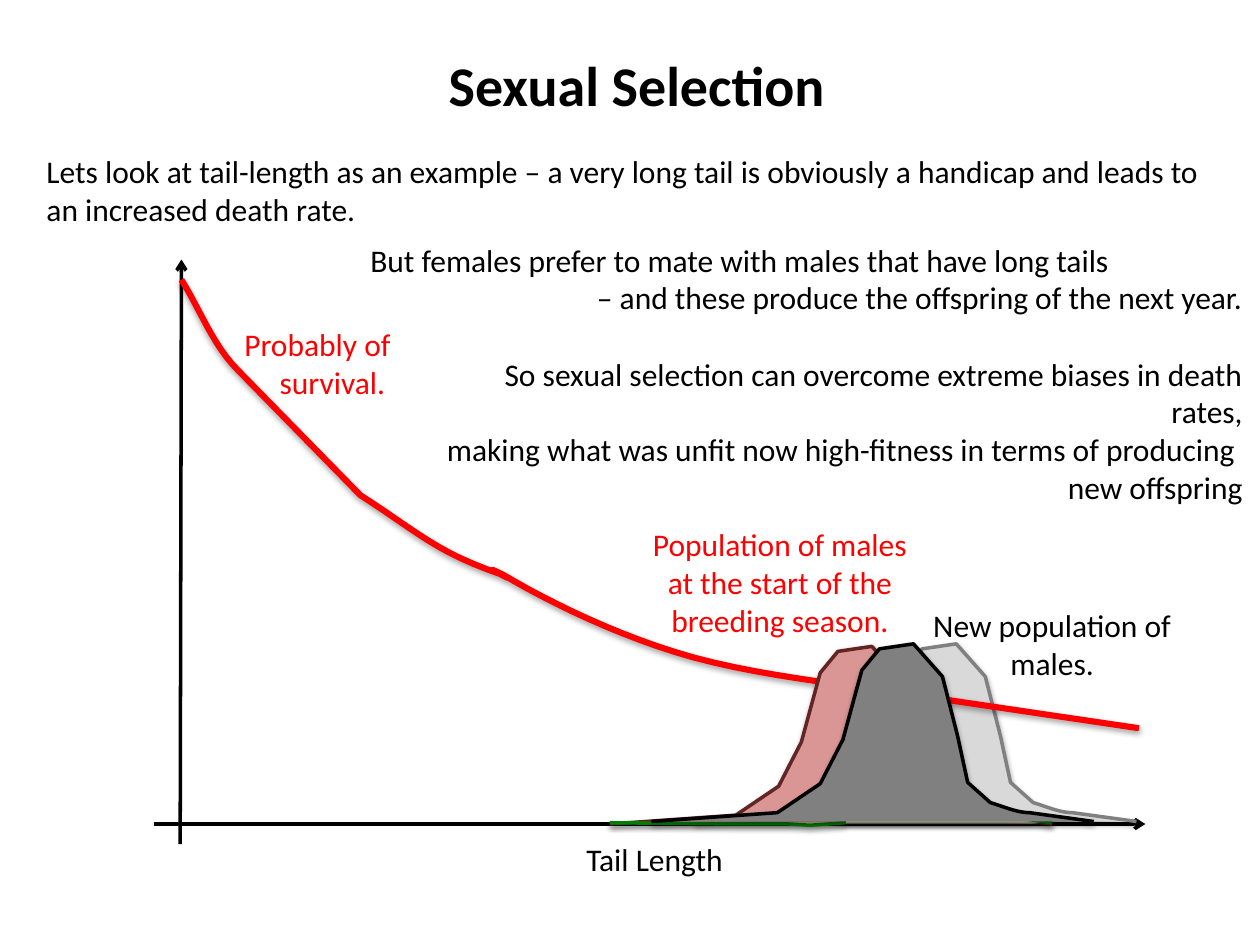
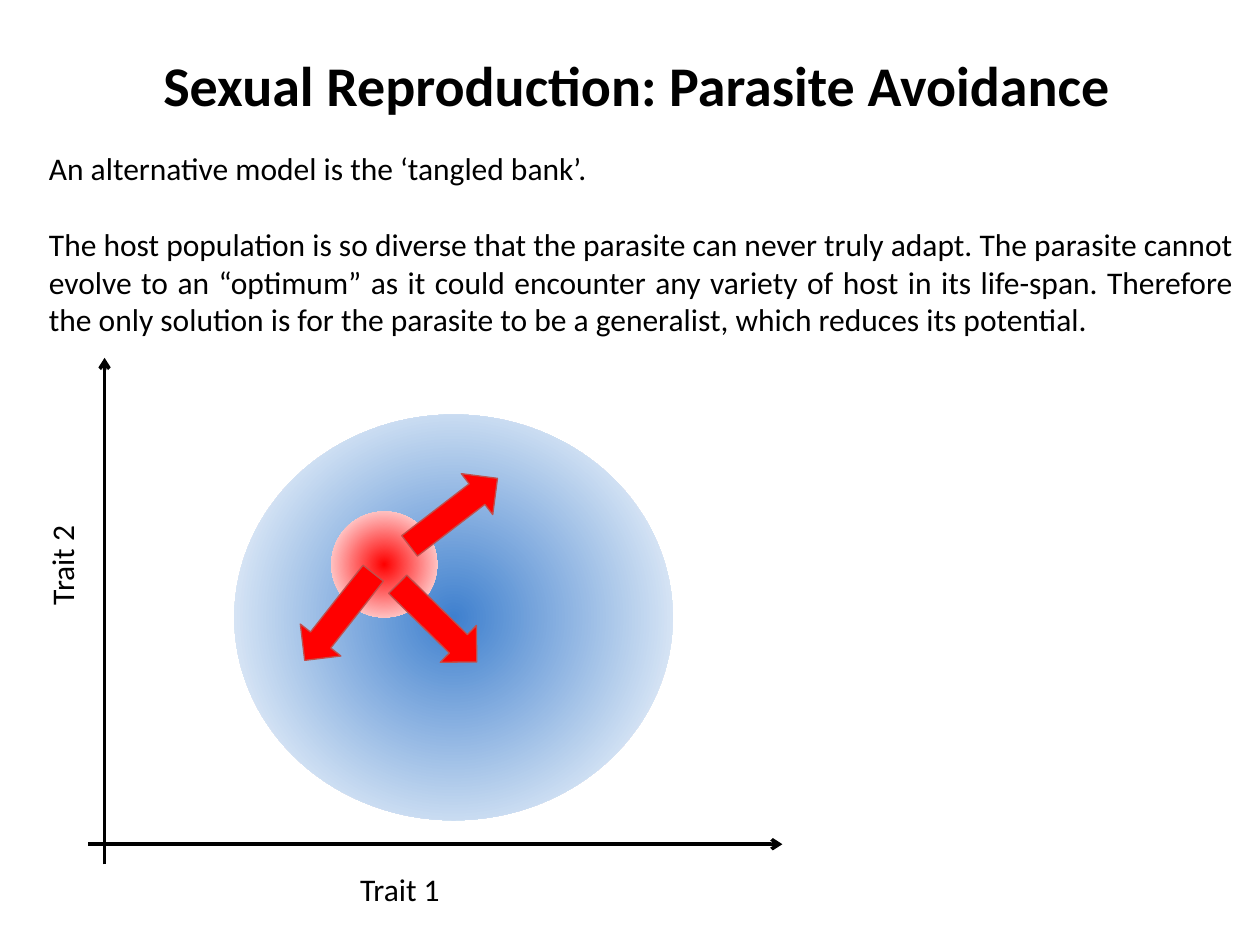
from pptx import Presentation
from pptx.dml.color import RGBColor
from pptx.enum.shapes import MSO_CONNECTOR, MSO_SHAPE
from pptx.enum.text import MSO_AUTO_SIZE as AutoSize, PP_ALIGN as Align
from pptx.oxml import parse_xml
from pptx.oxml.ns import nsdecls, qn
from pptx.util import Inches, Pt

# Shared look
FONT = "Calibri"
BLACK, RED, GREY = "000000", "FF0000", "808080"
BLANK_LINE = 22  # points, one empty line of body text

# Outlines: (x, y) is a straight step, six numbers are a Bezier curve
SURVIVAL = [(1.44, 2.22), (1.59, 2.46, 1.69, 2.74, 1.89, 2.94), (2.86, 3.93),
            (3.34, 4.24, 3.46, 4.38, 3.98, 4.56), (4.17, 4.66, 3.74, 4.44, 3.99, 4.56),
            (4.36, 4.78, 4.93, 5.06, 5.51, 5.22), (6.15, 5.39, 6.82, 5.44, 7.48, 5.55),
            (9.04, 5.78)]
RIGHT_SIDE = [(7.15, 5.39), (7.27, 5.86), (7.35, 6.23), (7.53, 6.39),
              (7.63, 6.42, 7.74, 6.47, 7.84, 6.47), (8.35, 6.54)]
POPULATION = [(4.84, 6.54), (5.84, 6.47), (6.18, 6.24), (6.36, 5.89), (6.51, 5.34),
              (6.65, 5.17), (6.92, 5.13)] + RIGHT_SIDE
BREEDERS = [(4.84, 6.54), (5.84, 6.55), (6.26, 6.55), (6.43, 6.56), (6.58, 6.55),
            (6.7, 6.54), (6.74, 5.92), (6.8, 5.48), (6.92, 5.29)] + RIGHT_SIDE


def rgb(color):
    return RGBColor.from_string(color)


def add_text(page, place, lines, size=18, color=BLACK, bold=False, align=Align.LEFT,
             wrap=True, rotation=0):
    """Each line is a string or a (string, paragraph format) pair."""
    box = page.shapes.add_textbox(*map(Inches, place))
    box.rotation = rotation
    frame = box.text_frame
    frame.word_wrap = wrap
    frame.auto_size = AutoSize.SHAPE_TO_FIT_TEXT
    for index, line in enumerate(lines):
        text, style = (line, {}) if isinstance(line, str) else line
        para = frame.paragraphs[0] if index == 0 else frame.add_paragraph()
        para.alignment = style.get("align", align)
        if "before" in style:
            para.space_before = Pt(style["before"])
        if "indent" in style:
            para._p.get_or_add_pPr().set("marL", str(Inches(style["indent"])))
        span = para.add_run()
        span.text = text
        span.font.name, span.font.size, span.font.bold = FONT, Pt(size), bold
        span.font.color.rgb = rgb(color)
    return box


def add_title(page, text):
    add_text(page, (1.02, 0.35, 8.07, 0.64), [text], size=32, bold=True, align=Align.CENTER)


def add_axis(page, start, end):
    axis = page.shapes.add_connector(MSO_CONNECTOR.STRAIGHT, *map(Inches, start + end))
    axis.line.color.rgb = rgb(BLACK)
    axis.line.width = Pt(2)
    axis.line._get_or_add_ln().append(parse_xml(f'<a:tailEnd {nsdecls("a")} type="arrow"/>'))
    axis._element.spPr.append(parse_xml(f'<a:effectLst {nsdecls("a")}/>'))


def paint(shape, fill=None, line=None, width=0.75):
    shape.shadow.inherit = False
    if fill:
        shape.fill.solid()
        shape.fill.fore_color.rgb = rgb(fill)
    else:
        shape.fill.background()
    if line:
        shape.line.color.rgb = rgb(line)
        shape.line.width = Pt(width)
    else:
        shape.line.fill.background()


def flatten(outline, steps=12):
    """Turn an outline with Bezier curves into plain points."""
    points = [outline[0]]
    for part in outline[1:]:
        if len(part) == 2:
            points.append(part)
            continue
        corners = [points[-1], part[:2], part[2:4], part[4:]]
        for step in range(1, steps + 1):
            t = step / steps
            weights = ((1 - t) ** 3, 3 * t * (1 - t) ** 2, 3 * t * t * (1 - t), t ** 3)
            points.append(tuple(sum(w * corner[axis] for w, corner in zip(weights, corners))
                                for axis in (0, 1)))
    return points


def add_curve(page, outline, line, fill=None, width=2, shift=(0, 0)):
    points = [(Inches(x + shift[0]), Inches(y + shift[1])) for x, y in flatten(outline)]
    builder = page.shapes.build_freeform(*points[0])
    builder.add_line_segments(points[1:], close=False)
    curve = builder.convert_to_shape()
    paint(curve, fill, line, width)
    curve._element.spPr.find(qn("a:effectLst")).append(parse_xml(
        f'<a:outerShdw {nsdecls("a")} blurRad="{Pt(3.1)}" dist="{Pt(1.6)}" dir="5400000" '
        f'rotWithShape="0"><a:srgbClr val="{BLACK}"><a:alpha val="38000"/></a:srgbClr>'
        '</a:outerShdw>'))


def add_glow(page, place, color):
    """Ellipse that fades from its centre towards white."""
    glow = page.shapes.add_shape(MSO_SHAPE.OVAL, *map(Inches, place))
    paint(glow)
    glow.fill.gradient()
    for stop, (position, tint) in zip(glow.fill.gradient_stops, [(0, color), (0.94, "FFFFFF")]):
        stop.position = position
        stop.color.rgb = rgb(tint)
    gradient = glow._element.spPr.find(qn("a:gradFill"))
    gradient.replace(gradient.find(qn("a:lin")), parse_xml(
        f'<a:path {nsdecls("a")} path="circle">'
        '<a:fillToRect l="50000" t="50000" r="50000" b="50000"/></a:path>'))


def add_arrow(page, left, top, rotation):
    arrow = page.shapes.add_shape(MSO_SHAPE.RIGHT_ARROW, *map(Inches, (left, top, 0.88, 0.41)))
    paint(arrow, RED, "C0504D")
    arrow.rotation = rotation


def build_selection(page):
    add_title(page, "Sexual Selection")
    add_text(page, (0.27, 1.16, 9.52, 0.71), [
        "Lets look at tail-length as an example – a very long tail is obviously a handicap "
        "and leads to an increased death rate."])

    # Axes
    add_axis(page, (1.43, 6.7), (1.44, 2.06))
    add_axis(page, (1.22, 6.54), (9.09, 6.54))
    add_text(page, (3.08, 6.62, 4.23, 0.4), ["Tail Length"], align=Align.CENTER)

    # Curves and their labels, back to front
    add_curve(page, POPULATION, GREY, "D9D9D9", shift=(0.67, -0.02))
    add_text(page, (7.29, 4.76, 2.12, 0.71), ["New population of males."], align=Align.CENTER)
    add_curve(page, SURVIVAL, RED, width=3.5)
    add_text(page, (1.84, 2.53, 1.38, 0.71),
             ["Probably of", ("survival.", {"indent": 0.28})], color=RED, wrap=False)
    add_curve(page, POPULATION, "632523", "D99694")
    add_text(page, (5.07, 4.12, 2.24, 1.01),
             ["Population of males at the start of the breeding season."],
             color=RED, align=Align.CENTER)
    add_text(page, (2.84, 1.86, 7.12, 1.92), [
        ("But females prefer to mate with males that have long tails", {"align": Align.LEFT}),
        "– and these produce the offspring of the next year.",
        ("So sexual selection can overcome extreme biases in death rates,",
         {"before": BLANK_LINE, "indent": 0.9}),
        "making what was unfit now high-fitness in terms of producing ",
        "new offspring"], align=Align.RIGHT)
    add_curve(page, BREEDERS, "008000", "CCFFCC", shift=(0, -0.01))
    add_curve(page, POPULATION, BLACK, GREY, shift=(0.33, -0.02))


def build_parasites(page):
    add_title(page, "Sexual Reproduction: Parasite Avoidance")
    add_text(page, (0.29, 1.13, 9.6, 1.62), [
        "An alternative model is the ‘tangled bank’.",
        ("The host population is so diverse that the parasite can never truly adapt. "
         "The parasite cannot evolve to an “optimum” as it could encounter any variety of host "
         "in its life-span. Therefore the only solution is for the parasite to be a generalist, "
         "which reduces its potential.", {"align": Align.JUSTIFY, "before": BLANK_LINE})])

    # Axes
    add_axis(page, (0.83, 6.86), (0.83, 2.84))
    add_axis(page, (0.7, 6.7), (6.21, 6.7))

    # Hosts, trait names and parasites
    add_glow(page, (1.86, 3.29, 3.48, 3.22), "3F80CE")
    add_text(page, (2.76, 6.86, 0.84, 0.4), ["Trait 1"], wrap=False)
    add_text(page, (0.07, 4.28, 0.84, 0.4), ["Trait 2"], wrap=False, rotation=270)
    add_glow(page, (2.63, 4.06, 0.84, 0.84), RED)
    for left, top, rotation in [(3.16, 3.86, 322.5), (3.03, 4.74, 44.5), (2.25, 4.69, 128.2)]:
        add_arrow(page, left, top, rotation)


def main():
    deck = Presentation()
    deck.slide_width, deck.slide_height = Inches(10), Inches(7.5)
    for build in (build_selection, build_parasites):
        build(deck.slides.add_slide(deck.slide_layouts[6]))
    deck.save("out.pptx")


if __name__ == "__main__":
    main()
